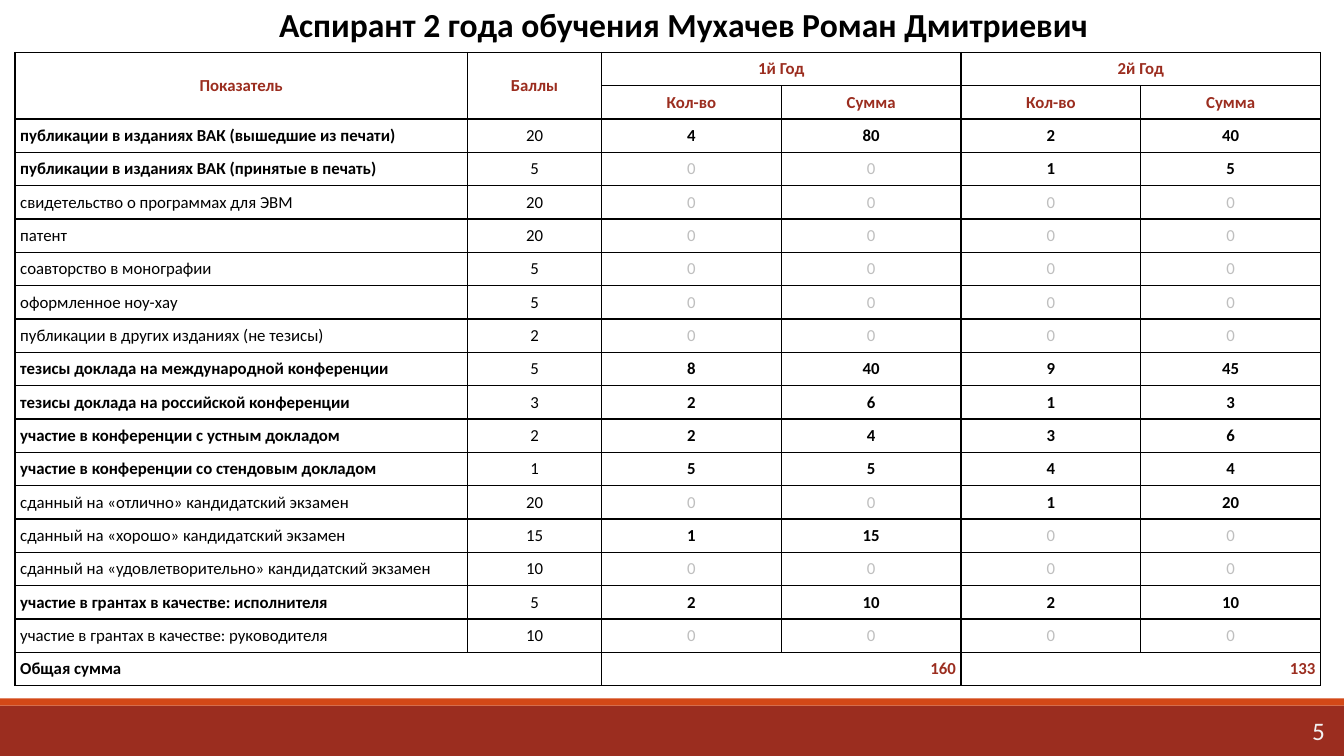
"""Builds the slide with a postgraduate's yearly score table."""
import dataclasses

import pptx
import pptx.dml.color
import pptx.enum.shapes
import pptx.enum.text
import pptx.oxml
import pptx.oxml.ns
import pptx.util

Cm = pptx.util.Cm
Align = pptx.enum.text.PP_ALIGN


@dataclasses.dataclass(frozen=True)
class Theme:
    """Colours, font and type sizes of the slide."""
    font: str = "Calibri"
    ink: str = "000000"
    paper: str = "FFFFFF"
    accent: str = "9B2D1F"
    stripe: str = "D34817"
    muted: str = "BFBFBF"
    page: str = "F2F2F2"
    title_size: int = 24
    page_size: int = 18
    table_size: int = 12
    border_width: float = 0.96


THEME = Theme()
WIDTH, HEIGHT = 33.87, 19.05
INSET = Cm(0.13)
COLUMNS = (11.4, 3.38) + (4.53,) * 4
ROW_HEIGHT = 0.84
YEARS = ("1й Год", "2й Год")
INDICATORS = (
    ("публикации в изданиях ВАК (вышедшие из печати)", True, 20, (4, 2)),
    ("публикации в изданиях ВАК (принятые в печать)", True, 5, (0, 1)),
    ("свидетельство о программах для ЭВМ", False, 20, (0, 0)),
    ("патент", False, 20, (0, 0)),
    ("соавторство в монографии", False, 5, (0, 0)),
    ("оформленное ноу-хау", False, 5, (0, 0)),
    ("публикации в других изданиях (не тезисы)", False, 2, (0, 0)),
    ("тезисы доклада на международной конференции", True, 5, (8, 9)),
    ("тезисы доклада на российской конференции", True, 3, (2, 1)),
    ("участие в конференции с устным докладом", True, 2, (2, 3)),
    ("участие в конференции со стендовым докладом", True, 1, (5, 4)),
    ("сданный на «отлично» кандидатский экзамен", False, 20, (0, 1)),
    ("сданный на «хорошо» кандидатский экзамен", False, 15, (1, 0)),
    ("сданный на «удовлетворительно» кандидатский экзамен", False, 10, (0, 0)),
    ("участие в грантах в качестве: исполнителя", True, 5, (2, 2)),
    ("участие в грантах в качестве: руководителя", False, 10, (0, 0)),
)


def rgb(value):
    """Return a colour object for a hex string."""
    return pptx.dml.color.RGBColor.from_string(value)


def write(frame, text, size=THEME.table_size, color=THEME.ink, bold=False, align=Align.CENTER):
    """Put one formatted paragraph into a text frame."""
    paragraph = frame.paragraphs[0]
    paragraph.alignment = align
    run = paragraph.add_run()
    run.text = str(text)
    run.font.name = THEME.font
    run.font.size = pptx.util.Pt(size)
    run.font.bold = bold
    run.font.color.rgb = rgb(color)


def add_band(slide, top, height, color):
    """Draw a full-width footer band."""
    band = slide.shapes.add_shape(
        pptx.enum.shapes.MSO_SHAPE.RECTANGLE, 0, Cm(top), Cm(WIDTH), Cm(height))
    band.shadow.inherit = False
    band.fill.solid()
    band.fill.fore_color.rgb = rgb(color)
    band.line.fill.background()


def add_title(slide, text):
    """Place the heading in the title placeholder."""
    heading = slide.shapes.title
    heading.left, heading.top = Cm(4.57), Cm(0)
    heading.width, heading.height = Cm(25.32), Cm(1.19)
    frame = heading.text_frame
    frame.margin_left = frame.margin_right = INSET
    frame.margin_top = frame.margin_bottom = INSET
    frame.vertical_anchor = pptx.enum.text.MSO_ANCHOR.MIDDLE
    frame.auto_size = pptx.enum.text.MSO_AUTO_SIZE.NONE
    write(frame, text, size=THEME.title_size, bold=True)


def add_page_number(slide, number):
    """Place the page number on the footer band."""
    page = slide.shapes.add_textbox(Cm(32.82), Cm(17.91), Cm(0.86), Cm(1.02))
    page.text_frame.word_wrap = False
    page.text_frame.auto_size = pptx.enum.text.MSO_AUTO_SIZE.SHAPE_TO_FIT_TEXT
    write(page.text_frame, number, size=THEME.page_size, color=THEME.page, align=Align.LEFT)


def style_cell(cell):
    """Give a cell its borders, fill, margins and anchor."""
    properties = cell._tc.get_or_add_tcPr()
    width = pptx.util.Pt(THEME.border_width)
    for side in "LRTB":
        properties.append(pptx.oxml.parse_xml(
            f'<a:ln{side} {pptx.oxml.ns.nsdecls("a")} w="{width}"><a:solidFill>'
            f'<a:srgbClr val="{THEME.ink}"/></a:solidFill></a:ln{side}>'))
    cell.fill.solid()
    cell.fill.fore_color.rgb = rgb(THEME.paper)
    cell.margin_left = cell.margin_right = INSET
    cell.margin_top = cell.margin_bottom = INSET
    cell.vertical_anchor = pptx.enum.text.MSO_ANCHOR.MIDDLE


def add_grid(slide, row_count):
    """Add the styled empty table and return it."""
    grid = slide.shapes.add_table(
        row_count, len(COLUMNS), Cm(0.38), Cm(1.32),
        Cm(sum(COLUMNS)), Cm(ROW_HEIGHT * row_count)).table
    grid.first_row = grid.horz_banding = False
    for column, width in zip(grid.columns, COLUMNS):
        column.width = Cm(width)
    for row in grid.rows:
        row.height = Cm(ROW_HEIGHT)
        for cell in row.cells:
            style_cell(cell)
    return grid


def fill_header(grid):
    """Write the two header rows."""
    def head(row, column, text):
        write(grid.cell(row, column).text_frame, text, color=THEME.accent, bold=True)

    for column, text in enumerate(("Показатель", "Баллы")):
        grid.cell(0, column).merge(grid.cell(1, column))
        head(0, column, text)
    for year, text in enumerate(YEARS):
        first = 2 + 2 * year
        grid.cell(0, first).merge(grid.cell(0, first + 1))
        head(0, first, text)
        head(1, first, "Кол-во")
        head(1, first + 1, "Сумма")


def fill_indicators(grid):
    """Write one row per indicator, with sums worked out from the points."""
    for row, (label, bold, points, counts) in enumerate(INDICATORS, start=2):
        write(grid.cell(row, 0).text_frame, label, bold=bold, align=Align.JUSTIFY)
        write(grid.cell(row, 1).text_frame, points)
        scores = [value for count in counts for value in (count, count * points)]
        for column, value in enumerate(scores, start=2):
            write(grid.cell(row, column).text_frame, value,
                  color=THEME.ink if value else THEME.muted, bold=value > 0)


def fill_totals(grid):
    """Write the closing row with the total of each year."""
    last = len(grid.rows) - 1
    for column in range(0, len(COLUMNS), 2):
        grid.cell(last, column).merge(grid.cell(last, column + 1))
    write(grid.cell(last, 0).text_frame, "Общая сумма", bold=True, align=Align.JUSTIFY)
    for year in range(len(YEARS)):
        total = sum(points * counts[year] for _, _, points, counts in INDICATORS)
        write(grid.cell(last, 2 + 2 * year).text_frame, total,
              color=THEME.accent, bold=True, align=Align.RIGHT)


def main():
    """Build and save the presentation."""
    deck = pptx.Presentation()
    deck.slide_width, deck.slide_height = Cm(WIDTH), Cm(HEIGHT)
    slide = deck.slides.add_slide(deck.slide_layouts[5])
    add_band(slide, 17.78, 1.27, THEME.accent)
    add_band(slide, 17.6, 0.18, THEME.stripe)
    grid = add_grid(slide, len(INDICATORS) + 3)
    fill_header(grid)
    fill_indicators(grid)
    fill_totals(grid)
    add_title(slide, "Аспирант 2 года обучения Мухачев Роман Дмитриевич")
    add_page_number(slide, 5)
    deck.save("out.pptx")


if __name__ == "__main__":
    main()
